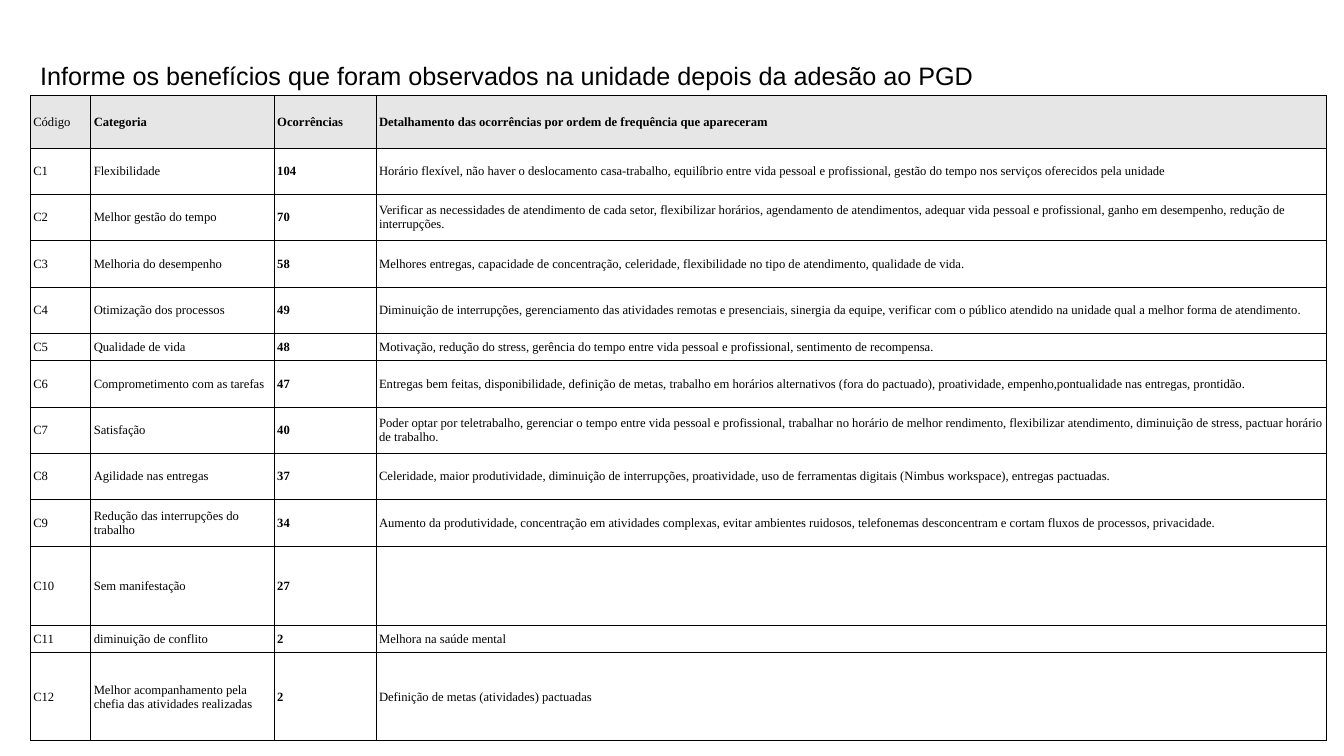
from pptx import Presentation
from pptx.dml.color import RGBColor
from pptx.enum.text import MSO_ANCHOR, MSO_AUTO_SIZE
from pptx.oxml import parse_xml
from pptx.oxml.ns import nsdecls
from pptx.util import Inches, Pt

BLACK = RGBColor(0x00, 0x00, 0x00)
WHITE = RGBColor(0xFF, 0xFF, 0xFF)
HEADER_GREY = RGBColor(0xE7, 0xE6, 0xE6)

TITLE = "Informe os benefícios que foram observados na unidade depois da adesão ao PGD"
HEADER = ("Código", "Categoria", "Ocorrências",
          "Detalhamento das ocorrências por ordem de frequência que apareceram")
COLUMN_WIDTHS = (0.6, 1.82, 1.01, 9.43)
COUNT_COLUMN = HEADER.index("Ocorrências")
HEADER_HEIGHT = 0.52
ROW_HEIGHT = 0.46
SPECIAL_HEIGHTS = {"C5": 0.27, "C10": 0.79, "C11": 0.27, "C12": 0.87}

# Category, occurrences, details; the codes C1, C2, ... follow the order
BENEFITS = [
    ("Flexibilidade", 104,
     "Horário flexível, não haver o deslocamento casa-trabalho, equilíbrio entre vida pessoal e "
     "profissional, gestão do tempo nos serviços oferecidos pela unidade"),
    ("Melhor gestão do tempo", 70,
     "Verificar as necessidades de atendimento de cada setor, flexibilizar horários, agendamento "
     "de atendimentos, adequar vida pessoal e profissional, ganho em desempenho, redução de "
     "interrupções."),
    ("Melhoria do desempenho", 58,
     "Melhores entregas, capacidade de concentração, celeridade, flexibilidade no tipo de "
     "atendimento, qualidade de vida."),
    ("Otimização dos processos", 49,
     "Diminuição de interrupções, gerenciamento das atividades remotas e presenciais, sinergia "
     "da equipe, verificar com o público atendido na unidade qual a melhor forma de atendimento."),
    ("Qualidade de vida", 48,
     "Motivação, redução do stress, gerência do tempo entre vida pessoal e profissional, "
     "sentimento de recompensa."),
    ("Comprometimento com as tarefas", 47,
     "Entregas bem feitas, disponibilidade, definição de metas, trabalho em horários alternativos "
     "(fora do pactuado), proatividade, empenho,pontualidade nas entregas, prontidão."),
    ("Satisfação", 40,
     "Poder optar por teletrabalho, gerenciar o tempo entre vida pessoal e profissional, trabalhar "
     "no horário de melhor rendimento, flexibilizar atendimento, diminuição de stress, pactuar "
     "horário de trabalho."),
    ("Agilidade nas entregas", 37,
     "Celeridade, maior produtividade, diminuição de interrupções, proatividade, uso de "
     "ferramentas digitais (Nimbus workspace), entregas pactuadas."),
    ("Redução das interrupções do trabalho", 34,
     "Aumento da produtividade, concentração em atividades complexas, evitar ambientes ruidosos, "
     "telefonemas desconcentram e cortam fluxos de processos, privacidade."),
    ("Sem manifestação", 27, ""),
    ("diminuição de conflito", 2, "Melhora na saúde mental"),
    ("Melhor acompanhamento pela chefia das atividades realizadas", 2,
     "Definição de metas (atividades) pactuadas"),
]


def add_run(p, text, font, size, bold=False):
    r = p.add_run()
    r.text = text
    r.font.name = font
    r.font.size = Pt(size)
    r.font.bold = bold
    r.font.color.rgb = BLACK


def add_title(slide):
    box = slide.shapes.add_textbox(Inches(0.3), Inches(0.55), Inches(11.58), Inches(0.4))
    tf = box.text_frame
    tf.word_wrap = True
    tf.auto_size = MSO_AUTO_SIZE.SHAPE_TO_FIT_TEXT
    add_run(tf.paragraphs[0], TITLE, "Arial", 18)


def set_borders(cell):
    """Draw the four cell edges; they must precede the fill in tcPr."""
    tc_pr = cell._tc.get_or_add_tcPr()
    for i, edge in enumerate(("lnL", "lnR", "lnT", "lnB")):
        tc_pr.insert(i, parse_xml(
            f'<a:{edge} {nsdecls("a")} w="{Pt(0.75)}"><a:solidFill>'
            f'<a:srgbClr val="{BLACK}"/></a:solidFill></a:{edge}>'))


def fill_cell(cell, text, fill, bold):
    cell.fill.solid()
    cell.fill.fore_color.rgb = fill
    cell.vertical_anchor = MSO_ANCHOR.MIDDLE
    cell.margin_left = cell.margin_right = Inches(0.03)
    cell.margin_top = cell.margin_bottom = Inches(0.02)
    set_borders(cell)
    if text:
        add_run(cell.text_frame.paragraphs[0], text, "Times New Roman", 9, bold)


def add_benefits_table(slide):
    rows = [HEADER] + [(f"C{n}", category, str(count), details)
                       for n, (category, count, details) in enumerate(BENEFITS, 1)]
    heights = [HEADER_HEIGHT] + [SPECIAL_HEIGHTS.get(row[0], ROW_HEIGHT) for row in rows[1:]]
    table = slide.shapes.add_table(
        len(rows), len(HEADER), Inches(0.3), Inches(0.95),
        Inches(sum(COLUMN_WIDTHS)), Inches(sum(heights))).table
    table.horz_banding = False
    for column, width in zip(table.columns, COLUMN_WIDTHS):
        column.width = Inches(width)
    for i, (row, height) in enumerate(zip(rows, heights)):
        table.rows[i].height = Inches(height)
        is_header = i == 0
        for j, text in enumerate(row):
            bold = j > 0 if is_header else j == COUNT_COLUMN
            fill_cell(table.cell(i, j), text, HEADER_GREY if is_header else WHITE, bold)


def main():
    prs = Presentation()
    prs.slide_width = Inches(13.33)
    prs.slide_height = Inches(7.5)
    slide = prs.slides.add_slide(prs.slide_layouts[6])
    add_title(slide)
    add_benefits_table(slide)
    prs.save("out.pptx")


if __name__ == "__main__":
    main()
